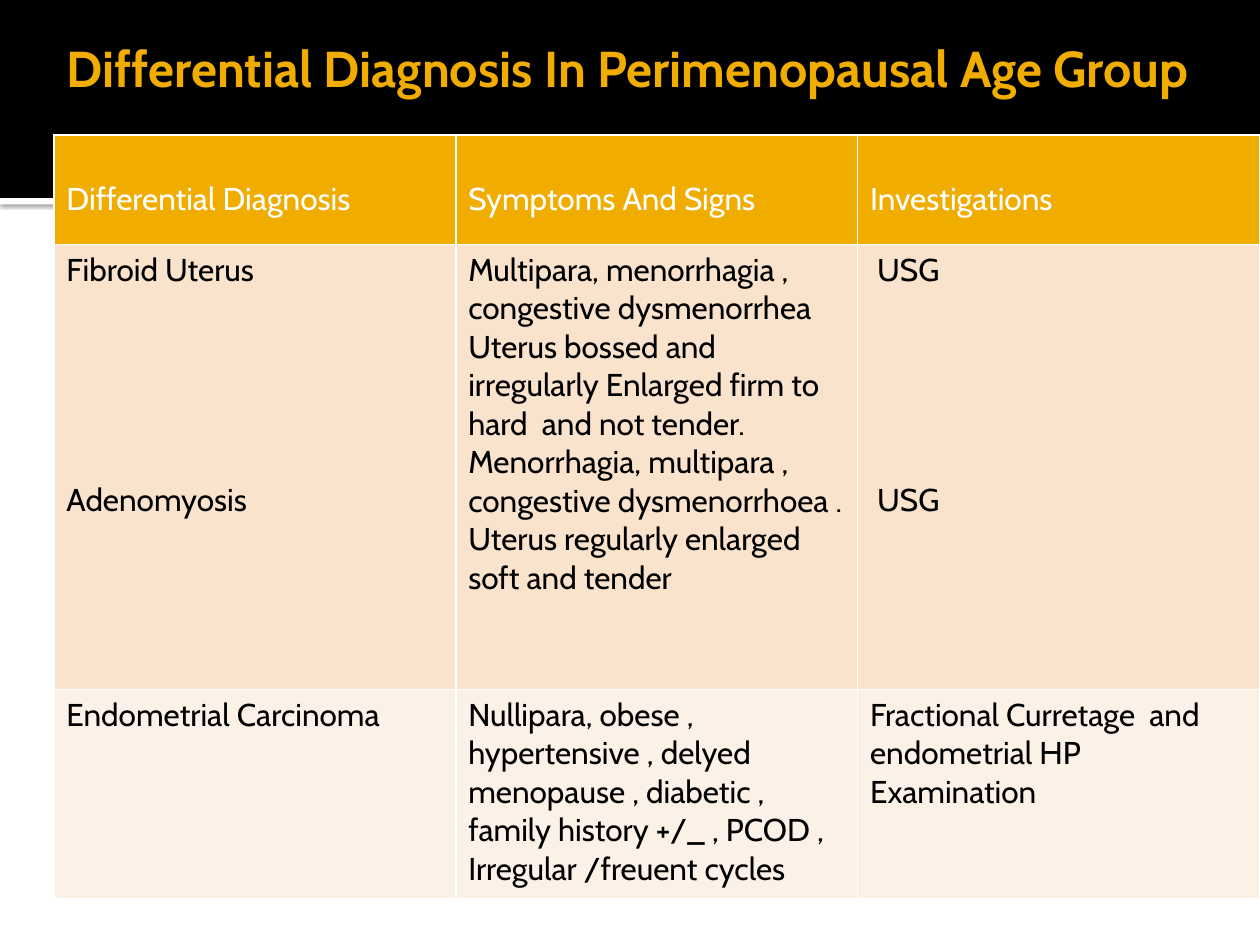
from lxml.etree import SubElement
from pptx import Presentation
from pptx.dml.color import RGBColor
from pptx.enum.shapes import MSO_SHAPE
from pptx.enum.text import MSO_ANCHOR, MSO_AUTO_SIZE, PP_ALIGN
from pptx.oxml.ns import qn
from pptx.util import Cm, Pt

COLORS = {"gold": "F0AD00", "white": "FFFFFF", "black": "000000",
          "peach": "F9E3CC", "cream": "FCF1E7"}
FONT = "Cabin"
TITLE = "Differential Diagnosis In Perimenopausal Age Group"
ROWS = [
    [["Differential Diagnosis"], ["Symptoms And Signs"], ["Investigations"]],
    [["Fibroid Uterus", "Adenomyosis"],
     ["Multipara, menorrhagia , congestive dysmenorrhea Uterus bossed and "
      "irregularly Enlarged firm to hard  and not tender.",
      "Menorrhagia, multipara , congestive dysmenorrhoea . "
      "Uterus regularly enlarged  soft and tender"],
     [" USG", " USG"]],
    [["Endometrial Carcinoma"],
     ["Nullipara, obese , hypertensive , delyed menopause , diabetic , "
      "family history +/_ , PCOD , Irregular /freuent cycles"],
     ["Fractional Curretage  and endometrial HP Examination"]],
]
ROW_STYLES = [
    {"height": 2.21, "fill": "gold", "text": "white", "top": 0.9},
    {"height": 8.97, "fill": "peach", "text": "black", "top": 0.13},
    {"height": 4.22, "fill": "cream", "text": "black", "top": 0.13},
]
BANDS = [("white", 3.99, 0.13), ("black", 0, 3.99)]
TABLE_LEFT, TABLE_TOP, COLUMN_WIDTH = 1.09, 2.72, 8.1
GAP_BETWEEN_CONDITIONS = 109.7


def color(name):
    """Return the named colour."""
    return RGBColor.from_string(COLORS[name])


def apply(target, values):
    """Set each attribute in a dict of format values."""
    for name, value in values.items():
        setattr(target, name, value)


def write(para, text, size, shade, bold=False):
    """Add one formatted span to a paragraph."""
    span = para.add_run()
    span.text = text
    apply(span.font, {"name": FONT, "size": Pt(size), "bold": bold})
    span.font.color.rgb = color(shade)


def add_band(page, shade, top, height):
    """Draw a full-width band of the page header."""
    band = page.shapes.add_shape(MSO_SHAPE.RECTANGLE, 0, Cm(top), Cm(25.4), Cm(height))
    band.shadow.inherit = False
    band.fill.solid()
    band.fill.fore_color.rgb = color(shade)
    band.line.fill.background()
    return band


def add_shadow(band):
    """Cast a soft shadow straight down from a band."""
    effects = band._element.spPr.find(qn("a:effectLst"))
    shadow = SubElement(effects, qn("a:outerShdw"), blurRad=str(Pt(2.5)),
                        dist=str(Pt(0.8)), dir="5400000", algn="t", rotWithShape="0")
    shade = SubElement(shadow, qn("a:srgbClr"), val=COLORS["black"])
    SubElement(shade, qn("a:alpha"), val="60000")


def add_title(page):
    """Place and format the title above the header bands."""
    box = page.shapes.title
    page.shapes._spTree.append(box._element)
    apply(box, {"left": Cm(1.09), "top": Cm(0), "width": Cm(23.6), "height": Cm(2.72)})
    apply(box.text_frame, {
        "margin_left": Cm(0.25), "margin_top": Cm(0.13), "margin_right": Cm(0.13),
        "margin_bottom": Cm(0.13), "vertical_anchor": MSO_ANCHOR.MIDDLE,
        "word_wrap": True, "auto_size": MSO_AUTO_SIZE.NONE})
    para = box.text_frame.paragraphs[0]
    para.alignment = PP_ALIGN.LEFT
    write(para, TITLE, 28.8, "gold", True)


def format_cell(cell, style):
    """Give a cell its borders, fill and margins."""
    properties = cell._tc.get_or_add_tcPr()
    for side in ("lnL", "lnR", "lnT", "lnB"):
        line = SubElement(properties, qn(f"a:{side}"), w=str(Pt(1)))
        fill = SubElement(line, qn("a:solidFill"))
        SubElement(fill, qn("a:srgbClr"), val=COLORS["white"])
    cell.fill.solid()
    cell.fill.fore_color.rgb = color(style["fill"])
    apply(cell, {"margin_left": Cm(0.25), "margin_right": Cm(0.25),
                 "margin_top": Cm(style["top"]), "margin_bottom": Cm(0.13),
                 "vertical_anchor": MSO_ANCHOR.TOP})


def add_diagnosis_table(page):
    """Build the table of conditions, signs and investigations."""
    count = len(ROWS[0])
    height = sum(style["height"] for style in ROW_STYLES)
    table = page.shapes.add_table(len(ROWS), count, Cm(TABLE_LEFT), Cm(TABLE_TOP),
                                  Cm(COLUMN_WIDTH * count), Cm(height)).table
    for column in table.columns:
        column.width = Cm(COLUMN_WIDTH)
    for row, texts, style in zip(table.rows, ROWS, ROW_STYLES):
        row.height = Cm(style["height"])
        for index, (cell, lines) in enumerate(zip(row.cells, texts)):
            format_cell(cell, style)
            for number, text in enumerate(lines):
                frame = cell.text_frame
                para = frame.add_paragraph() if number else frame.paragraphs[0]
                if number and index != 1:
                    para.space_before = Pt(GAP_BETWEEN_CONDITIONS)
                write(para, text, 18, style["text"])


def main():
    """Build and save the deck."""
    deck = Presentation()
    apply(deck, {"slide_width": Cm(25.4), "slide_height": Cm(19.05)})
    page = deck.slides.add_slide(deck.slide_layouts[5])
    page.background.fill.solid()
    page.background.fill.fore_color.rgb = color("white")
    strip, _ = [add_band(page, *band) for band in BANDS]
    add_shadow(strip)
    add_title(page)
    add_diagnosis_table(page)
    deck.save("out.pptx")


if __name__ == "__main__":
    main()
